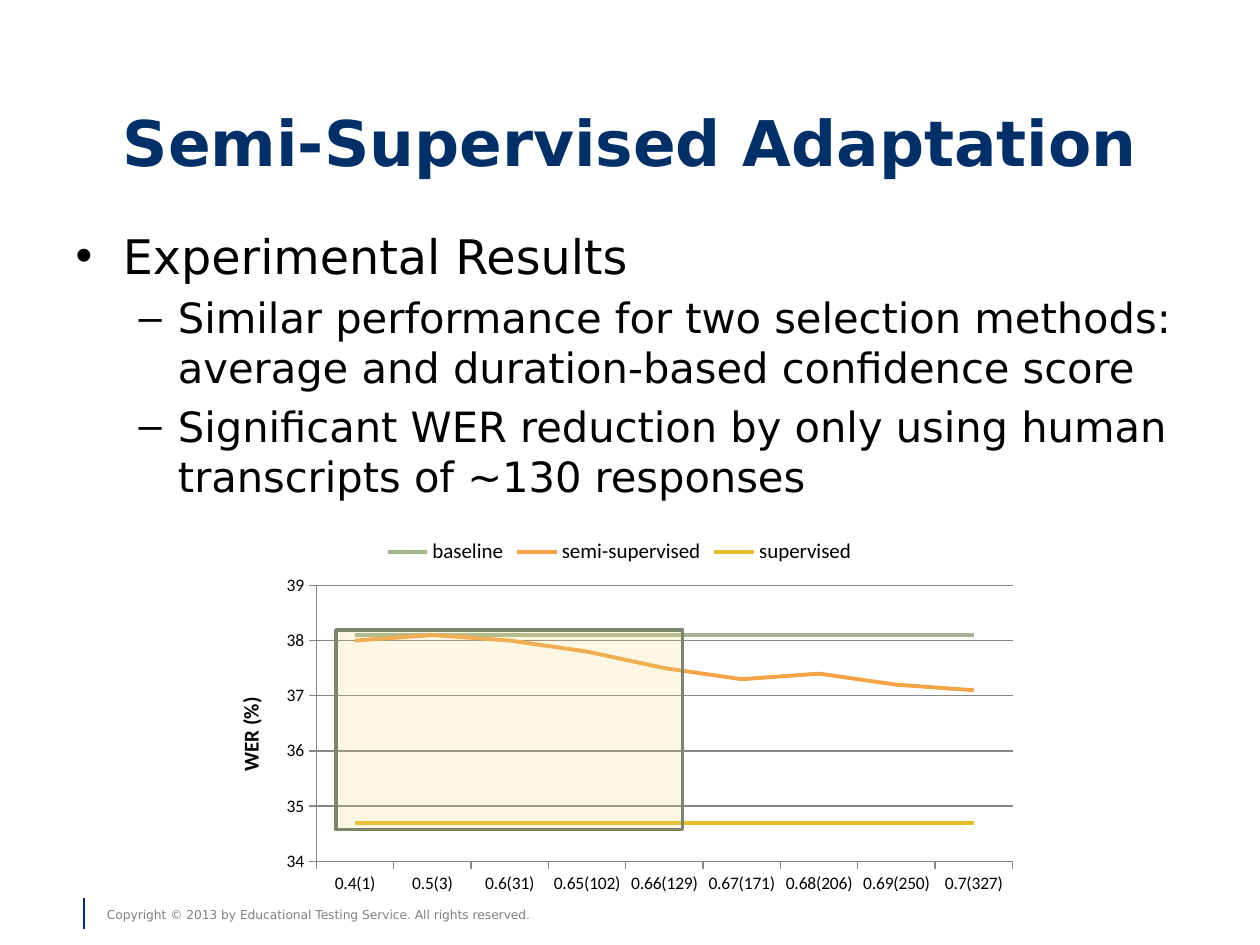
from lxml import etree
from pptx import Presentation
from pptx.chart.data import CategoryChartData
from pptx.dml.color import RGBColor
from pptx.enum.chart import XL_CHART_TYPE as ChartType, XL_LEGEND_POSITION as LegendPos
from pptx.enum.chart import XL_MARKER_STYLE as Marker, XL_TICK_MARK as Tick
from pptx.enum.shapes import MSO_CONNECTOR as Connector, MSO_SHAPE as Shape
from pptx.enum.text import MSO_ANCHOR as Anchor, MSO_AUTO_SIZE as AutoSize, PP_ALIGN as Align
from pptx.oxml import parse_xml
from pptx.oxml.ns import nsdecls, qn
from pptx.util import Pt

COLORS = {
    "navy": "003067", "black": "000000", "white": "FFFFFF", "copyright": "808080",
    "grid": "868686", "baseline": "A5B592", "semi-supervised": "F3A447",
    "supervised": "E7BC29", "highlight": "F1D77F", "frame": "7A866C",
}
TEXT_FONT, CHART_FONT = "DejaVu Sans", "Calibri"

BULLETS = [
    (0, "Experimental Results"),
    (1, "Similar performance for two selection methods: "
        "average and duration-based confidence score"),
    (1, "Significant WER reduction by only using human transcripts of ~130 responses"),
]
BULLET_SIZES = [27.2, 23.8]

CATEGORIES = ["0.4(1)", "0.5(3)", "0.6(31)", "0.65(102)", "0.66(129)",
              "0.67(171)", "0.68(206)", "0.69(250)", "0.7(327)"]
SERIES = {
    "baseline": [38.1] * len(CATEGORIES),
    "semi-supervised": [38, 38.1, 38, 37.8, 37.5, 37.3, 37.4, 37.2, 37.1],
    "supervised": [34.7] * len(CATEGORIES),
}


def color(name):
    return RGBColor.from_string(COLORS[name])


class SlideBuilder:
    """Holds the shared style and the page being built."""

    def __init__(self, deck):
        self.page = deck.slides.add_slide(deck.slide_layouts[1])
        self.page.background.fill.solid()
        self.page.background.fill.fore_color.rgb = color("white")

    def style(self, font, size, shade="black", bold=False, name=TEXT_FONT):
        font.name, font.size, font.bold = name, Pt(size), bold
        font.color.rgb = color(shade)

    def stroke(self, line, shade, width):
        line.color.rgb = color(shade)
        line.width = Pt(width)

    def place(self, box, left, top, width, height):
        box.left, box.top, box.width, box.height = map(Pt, (left, top, width, height))

    def title(self, text, *area):
        box = self.page.shapes.title
        self.place(box, *area)
        frame = box.text_frame
        frame.text, frame.auto_size = text, AutoSize.NONE
        frame.vertical_anchor = Anchor.MIDDLE
        para = frame.paragraphs[0]
        para.alignment = Align.CENTER
        self.style(para.font, 36, "navy", bold=True)

    def bullets(self, items, *area):
        box = self.page.placeholders[1]
        self.place(box, *area)
        frame = box.text_frame
        frame.auto_size = AutoSize.NONE
        for index, (level, text) in enumerate(items):
            para = frame.add_paragraph() if index else frame.paragraphs[0]
            para.text, para.level = text, level
            self.style(para.font, BULLET_SIZES[level])

    def label(self, text, size, shade, *area):
        box = self.page.shapes.add_textbox(*map(Pt, area))
        box.text_frame.word_wrap = True
        para = box.text_frame.paragraphs[0]
        para.text = text
        self.style(para.font, size, shade)

    def line(self, shade, width, *ends):
        rule = self.page.shapes.add_connector(Connector.STRAIGHT, *map(Pt, ends))
        self.stroke(rule.line, shade, width)
        etree.SubElement(rule._element.spPr, qn("a:effectLst"))

    def highlight(self, opacity, *area):
        box = self.page.shapes.add_shape(Shape.RECTANGLE, *map(Pt, area))
        box.shadow.inherit = False
        box.fill.solid()
        box.fill.fore_color.rgb = color("highlight")
        self.stroke(box.line, "frame", 2)
        tint = box._element.spPr.find(qn("a:solidFill"))[0]
        etree.SubElement(tint, qn("a:alpha"), val=str(opacity * 1000))

    def line_chart(self, categories, series, *area):
        data = CategoryChartData()
        data.categories = categories
        for name, values in series.items():
            data.add_series(name, values)
        chart = self.page.shapes.add_chart(ChartType.LINE, *map(Pt, area), data).chart
        self.style(chart.font, 10, name=CHART_FONT)
        chart.has_title = False

        # Legend above the plot
        chart.has_legend = True
        chart.legend.position = LegendPos.TOP
        chart.legend.include_in_layout = False
        self.style(chart.legend.font, 12, name=CHART_FONT)

        # Axes
        scale = chart.value_axis
        scale.minimum_scale, scale.maximum_scale, scale.major_unit = 34, 39, 1
        scale.has_major_gridlines = True
        scale.tick_labels.number_format = "General"
        scale.tick_labels.number_format_is_linked = False
        self.stroke(scale.major_gridlines.format.line, "grid", 0.75)
        for axis in (scale, chart.category_axis):
            axis.major_tick_mark = Tick.OUTSIDE
            self.stroke(axis.format.line, "grid", 0.75)
        caption = scale.axis_title.text_frame
        caption.text = "WER (%)"
        self.style(caption.paragraphs[0].font, 12, bold=True, name=CHART_FONT)

        # Lines
        plot = chart.plots[0]
        plot.vary_by_categories = False
        for line in plot.series:
            line.smooth = False
            line.marker.style = Marker.NONE
            self.stroke(line.format.line, line.name, 2.25)

        # Inner plot position, as shares of the chart area
        shares = {"x": 0.13, "y": 0.16, "w": 0.85, "h": 0.73}
        modes = "".join(f'<c:{key}Mode val="edge"/>' for key in "xy")
        sizes = "".join(f'<c:{key} val="{share}"/>' for key, share in shares.items())
        area_xml = chart._chartSpace.chart.plotArea
        for old in area_xml.findall(qn("c:layout")):
            area_xml.remove(old)
        area_xml.insert(0, parse_xml(
            f'<c:layout {nsdecls("c")}><c:manualLayout><c:layoutTarget val="inner"/>'
            f"{modes}{sizes}</c:manualLayout></c:layout>"))


def main():
    deck = Presentation()
    deck.slide_width, deck.slide_height = Pt(720), Pt(540)
    slide = SlideBuilder(deck)

    # Footer
    slide.label("Copyright © 2013 by Educational Testing Service. All rights reserved.",
                7, "copyright", 54, 515, 450, 16)
    slide.line("navy", 0.75, 48, 513, 48, 531)

    # Heading and findings
    slide.title("Semi-Supervised Adaptation", 36, 42, 648, 78)
    slide.bullets(BULLETS, 36, 126, 642, 174)

    # Results chart with the highlighted range
    slide.line_chart(CATEGORIES, SERIES, 120, 300, 468, 216)
    slide.highlight(21, 192, 360, 198, 114)

    deck.save("out.pptx")


if __name__ == "__main__":
    main()
